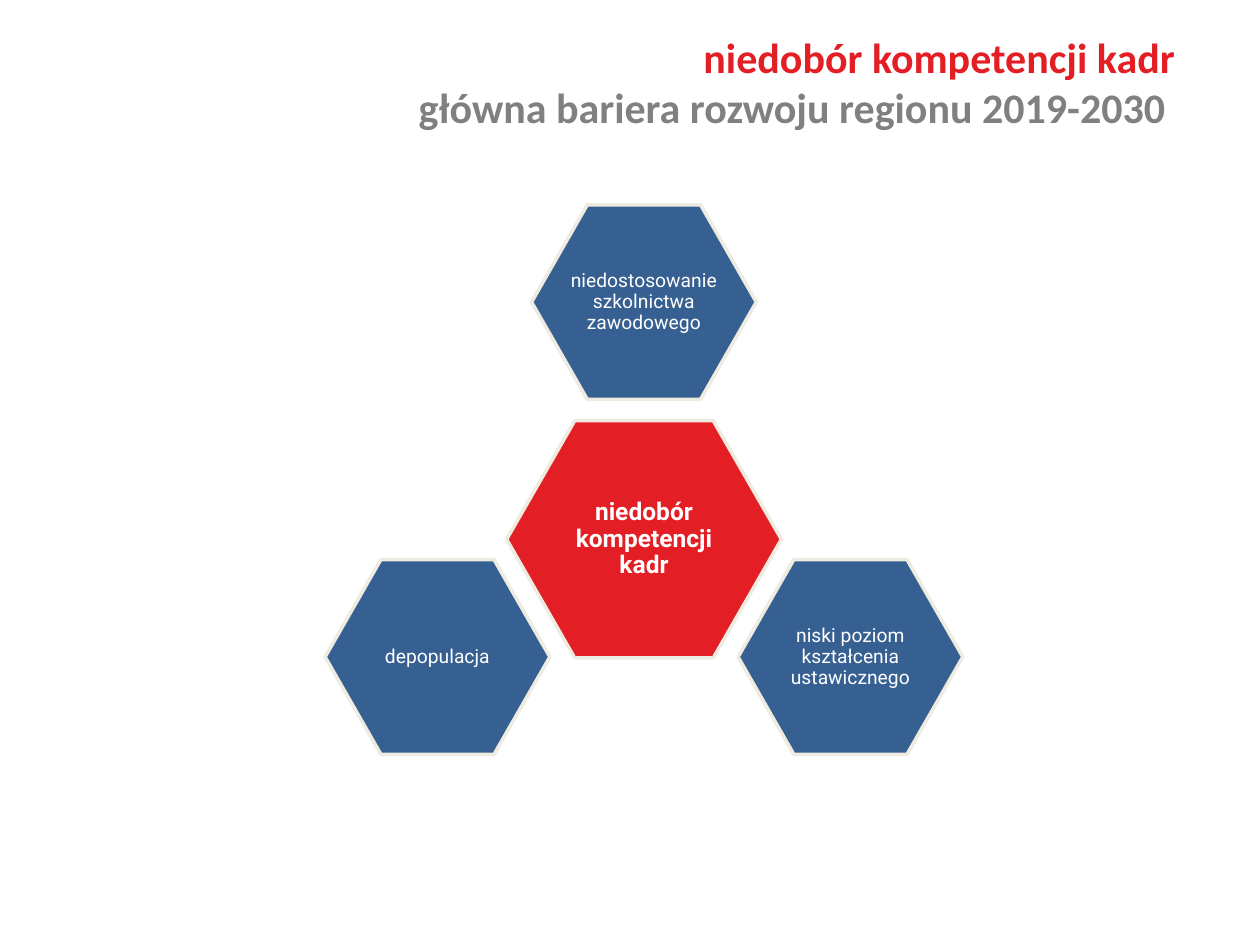
from pptx import Presentation
from pptx.dml.color import RGBColor
from pptx.enum.text import MSO_ANCHOR, PP_ALIGN
from pptx.util import Pt

CENTER = PP_ALIGN.CENTER
RIGHT = PP_ALIGN.RIGHT
MIDDLE = MSO_ANCHOR.MIDDLE
TOP = MSO_ANCHOR.TOP
RED, GREY, BLUE, CREAM, WHITE = "E31E24", "808080", "376092", "EEECE1", "FFFFFF"


def color(value):
    return RGBColor.from_string(value)


def write(paragraph, text, text_color, font_format):
    run = paragraph.add_run()
    run.text = text
    run.font.color.rgb = color(text_color)
    for name, value in font_format.items():
        setattr(run.font, name, value)


presentation = Presentation()
presentation.slide_width = Pt(720)
presentation.slide_height = Pt(540)
slide = presentation.slides.add_slide(presentation.slide_layouts[6])

title = slide.shapes.add_textbox(Pt(36), Pt(14.4), Pt(648), Pt(90))
title_frame = title.text_frame
title_format = {"word_wrap": True, "vertical_anchor": TOP, "margin_right": Pt(12.6)}
for name, value in title_format.items():
    setattr(title_frame, name, value)
title_lines = [
    ("niedobór kompetencji kadr", RED),
    ("główna bariera rozwoju regionu 2019-2030 ", GREY),
]
title_font = {"name": "Calibri", "size": Pt(24), "bold": True}
for index, (text, text_color) in enumerate(title_lines):
    paragraph = title_frame.add_paragraph() if index else title_frame.paragraphs[0]
    paragraph.alignment = RIGHT
    write(paragraph, text, text_color, title_font)

middle_x = 368
side_offset = 118
corner_ratio = 0.248
main_style = {
    "size": (157, 135.6), "fill": RED, "margins": (28, 24.5),
    "font": {"name": "Roboto", "size": Pt(14), "bold": True},
}
cause_style = {
    "size": (128.4, 111.2), "fill": BLUE, "margins": (11.5, 11.5),
    "font": {"name": "Roboto", "size": Pt(11), "bold": False},
}
hexagons = [
    ("niedobór kompetencji kadr", middle_x, 308.2, main_style),
    ("niedostosowanie szkolnictwa zawodowego", middle_x, 172.6, cause_style),
    ("niski poziom kształcenia ustawicznego", middle_x + side_offset, 375.4, cause_style),
    ("depopulacja", middle_x - side_offset, 375.4, cause_style),
]
for text, center_x, center_y, style in hexagons:
    width, height = style["size"]
    left, right = center_x - width / 2, center_x + width / 2
    top, bottom = center_y - height / 2, center_y + height / 2
    corner = width * corner_ratio
    corners = [
        (left + corner, top), (right - corner, top), (right, center_y),
        (right - corner, bottom), (left + corner, bottom),
    ]
    builder = slide.shapes.build_freeform(Pt(left), Pt(center_y))
    builder.add_line_segments([(Pt(x), Pt(y)) for x, y in corners], close=True)
    hexagon = builder.convert_to_shape()
    hexagon.shadow.inherit = False
    hexagon.fill.solid()
    hexagon.fill.fore_color.rgb = color(style["fill"])
    hexagon.line.color.rgb = color(CREAM)
    hexagon.line.width = Pt(2)

    horizontal, vertical = style["margins"]
    frame_format = {
        "word_wrap": True, "vertical_anchor": MIDDLE,
        "margin_left": Pt(horizontal), "margin_right": Pt(horizontal),
        "margin_top": Pt(vertical), "margin_bottom": Pt(vertical),
    }
    for name, value in frame_format.items():
        setattr(hexagon.text_frame, name, value)
    paragraph = hexagon.text_frame.paragraphs[0]
    paragraph.alignment = CENTER
    paragraph.line_spacing = 0.9
    write(paragraph, text, WHITE, style["font"])

presentation.save("out.pptx")
